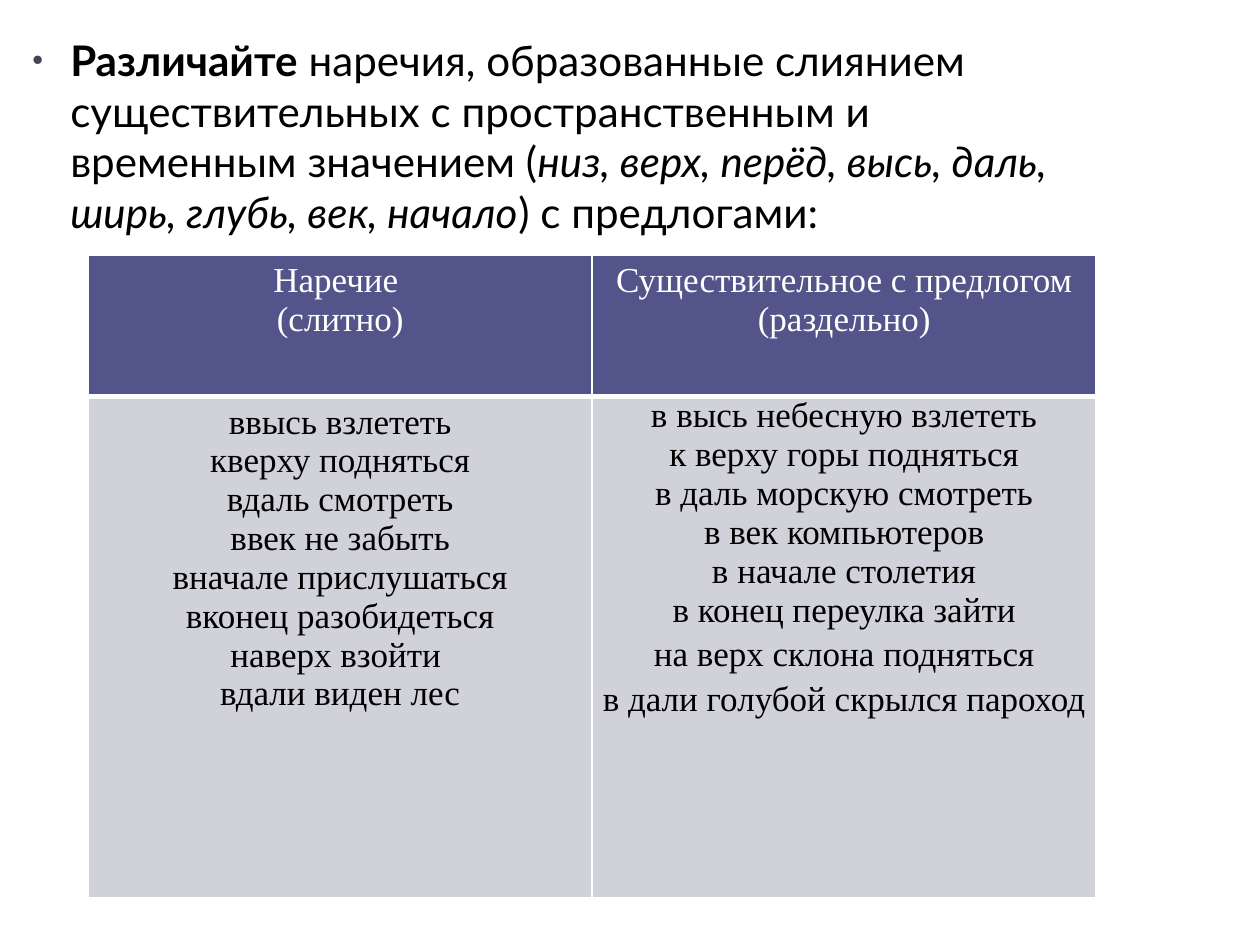
from lxml.etree import SubElement as Sub
from pptx import Presentation
from pptx.dml.color import RGBColor as RGB
from pptx.enum.text import MSO_ANCHOR as ANCHOR, PP_ALIGN as ALIGN
from pptx.oxml.ns import qn
from pptx.util import Inches, Pt

W, H = 10, 7.5
COLORS = {"text": "000000", "bullet": "424456", "header": "53548A",
          "body": "D1D1DA", "white": "FFFFFF"}
RULE = [  # text, bold, italic
    ("Различайте", True, False),
    (" наречия, образованные слиянием существительных с пространственным "
     "и временным значением (", False, False),
    ("низ, верх, перёд, высь, даль, ширь, глубь, век, начало", False, True),
    (") с предлогами:", False, False),
]
HEADERS = ["Наречие \n(слитно)", "Существительное с предлогом (раздельно)"]
ADVERBS = ["ввысь взлететь", "кверху подняться", "вдаль смотреть",
           "ввек не забыть", "вначале прислушаться", "вконец разобидеться",
           "наверх взойти ", "вдали виден лес"]
NOUNS = ["в высь небесную взлететь", "к верху горы подняться",
         "в даль морскую смотреть", "в век компьютеров", "в начале столетия",
         "в конец переулка зайти", "на верх склона подняться",
         "в дали голубой скрылся пароход "]


def share(x, y, w, h):
    """Turn shares of the slide into a box of lengths."""
    return Inches(x * W), Inches(y * H), Inches(w * W), Inches(h * H)


def style(font, name, size, color):
    font.name, font.size = name, Pt(size)
    font.color.rgb = RGB.from_string(COLORS[color])


def add_bullet(p, indent):
    pPr = p._p.get_or_add_pPr()
    pPr.set("marL", str(indent))
    pPr.set("indent", str(-indent))
    Sub(Sub(pPr, qn("a:buClr")), qn("a:srgbClr"), val=COLORS["bullet"])
    Sub(pPr, qn("a:buSzPct"), val="73000")
    Sub(pPr, qn("a:buFont"), typeface="Arial")
    Sub(pPr, qn("a:buChar"), char="•")


def add_rule(s, box):
    tf = s.shapes.add_textbox(*box).text_frame
    tf.word_wrap = True
    p = tf.paragraphs[0]
    add_bullet(p, Inches(0.3))
    for text, bold, italic in RULE:
        r = p.add_run()
        r.text = text
        style(r.font, "Lato", 24.1, "text")
        r.font.bold, r.font.italic = bold, italic


def set_borders(cell, bottom):
    tcPr = cell._tc.get_or_add_tcPr()
    widths = {"a:lnL": 1, "a:lnR": 1, "a:lnT": 1, "a:lnB": bottom}
    for i, (tag, width) in enumerate(widths.items()):
        ln = Sub(tcPr, qn(tag), w=str(Pt(width)))
        Sub(Sub(ln, qn("a:solidFill")), qn("a:srgbClr"), val=COLORS["white"])
        tcPr.insert(i, ln)  # borders come before the fill


def fill_cell(cell, text, fill, color, bottom):
    cell.fill.solid()
    cell.fill.fore_color.rgb = RGB.from_string(COLORS[fill])
    cell.vertical_anchor = ANCHOR.TOP
    set_borders(cell, bottom)
    cell.text_frame.text = text
    for p in cell.text_frame.paragraphs:
        p.alignment = ALIGN.CENTER
        for r in p.runs:
            style(r.font, "Times New Roman", 20, color)
            r.font.bold = False


def add_comparison(s, box):
    table = s.shapes.add_table(2, 2, *box).table
    height = box[3]
    table.rows[0].height = int(height * 0.22)
    table.rows[1].height = height - table.rows[0].height
    for col, words in enumerate([ADVERBS, NOUNS]):
        fill_cell(table.cell(0, col), HEADERS[col], "header", "white", 3)
        fill_cell(table.cell(1, col), "\n".join(words), "body", "text", 1)

    # Tighter margins and looser last lines in the noun cell
    cell = table.cell(1, 1)
    cell.margin_left = cell.margin_right = Inches(0.07)
    cell.margin_top = cell.margin_bottom = 0
    for p in cell.text_frame.paragraphs[-2:]:
        p.line_spacing = 1.15

    # Header bottom edge is shared with the row below
    for col in range(2):
        top = table.cell(1, col)._tc.tcPr.find(qn("a:lnT"))
        top.set("w", str(Pt(3)))


def main():
    prs = Presentation()
    prs.slide_width, prs.slide_height = Inches(W), Inches(H)
    s = prs.slides.add_slide(prs.slide_layouts[6])
    add_rule(s, share(0.016, 0.03, 0.86, 0.2))
    add_comparison(s, share(0.07, 0.27, 0.8, 0.68))
    prs.save("out.pptx")


if __name__ == "__main__":
    main()
